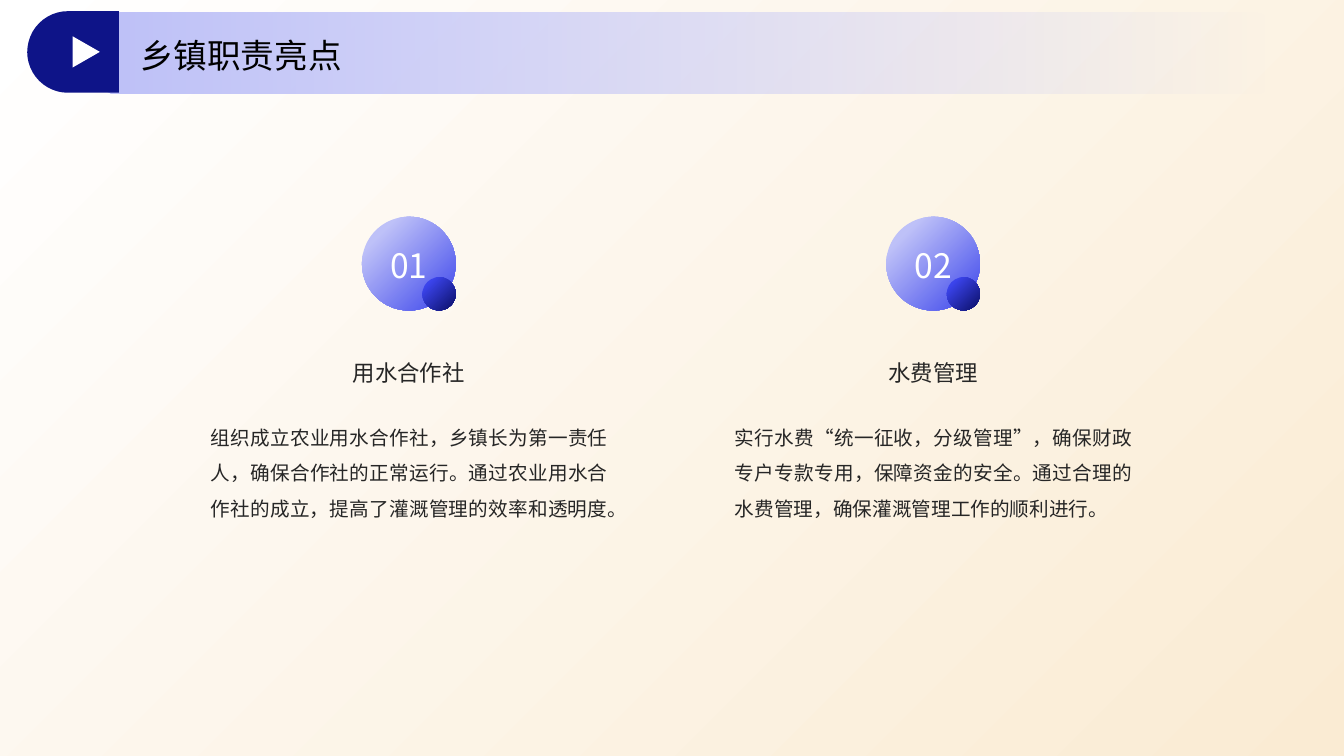
"""Build the slide on township responsibility highlights."""
from dataclasses import dataclass

import lxml.etree
import pptx
import pptx.dml.color
import pptx.enum.shapes
import pptx.enum.text
import pptx.oxml
import pptx.oxml.ns
import pptx.shapes.autoshape
import pptx.slide
import pptx.util

Inches = pptx.util.Inches
Preset = pptx.enum.shapes.MSO_SHAPE
Align = pptx.enum.text.PP_ALIGN
Anchor = pptx.enum.text.MSO_ANCHOR
Shape = pptx.shapes.autoshape.Shape
Slide = pptx.slide.Slide

FONT = "Noto Sans CJK SC"
COLORS = {
    "white": "FFFFFF",
    "cream": "FAEBD3",
    "text": "262626",
    "black": "000000",
    "lavender": "BEC1F8",
    "blue": "3B44EB",
    "navy": "0E1488",
    "midnight": "0B0F66",
}
LINEAR = '<a:lin ang="{}" scaled="0"/>'
RADIAL = '<a:path path="circle"><a:fillToRect l="100000" t="100000"/></a:path>'


@dataclass(frozen=True)
class Frame:
    left: float
    top: float
    width: float
    height: float

    def lengths(self) -> list[int]:
        return [Inches(value) for value in (self.left, self.top, self.width, self.height)]


@dataclass(frozen=True)
class Stop:
    position: int
    color: str
    opacity: int = 100


@dataclass(frozen=True)
class TextStyle:
    size: int
    color: str
    align: Align
    spacing: float = 1.0


@dataclass(frozen=True)
class Topic:
    number: str
    heading: str
    body: str


HEADING = TextStyle(16, "text", Align.CENTER)
BODY = TextStyle(14, "text", Align.JUSTIFY, 1.5)
NUMBER = TextStyle(24, "white", Align.CENTER, 1.1)
TITLE = TextStyle(24, "black", Align.LEFT, 1.1)

TOPICS = [
    Topic("01", "用水合作社",
          "组织成立农业用水合作社，乡镇长为第一责任人，确保合作社的正常运行。"
          "通过农业用水合作社的成立，提高了灌溉管理的效率和透明度。"),
    Topic("02", "水费管理",
          "实行水费“统一征收，分级管理”，确保财政专户专款专用，保障资金的安全。"
          "通过合理的水费管理，确保灌溉管理工作的顺利进行。"),
]


def rgb(name: str) -> pptx.dml.color.RGBColor:
    return pptx.dml.color.RGBColor.from_string(COLORS[name])


def add_shape(slide: Slide, preset: Preset, frame: Frame, rotation: int = 0) -> Shape:
    shape = slide.shapes.add_shape(preset, *frame.lengths())
    shape.rotation = rotation
    shape.shadow.inherit = False
    shape.line.fill.background()
    return shape


def fill_solid(shape: Shape, color: str) -> None:
    shape.fill.solid()
    shape.fill.fore_color.rgb = rgb(color)


def fill_gradient(shape: Shape, direction: str, stops: list[Stop]) -> None:
    stop_xml = "".join(
        f'<a:gs pos="{stop.position * 1000}"><a:srgbClr val="{COLORS[stop.color]}">'
        f'<a:alpha val="{stop.opacity * 1000}"/></a:srgbClr></a:gs>'
        for stop in stops
    )
    gradient = pptx.oxml.parse_xml(
        f'<a:gradFill {pptx.oxml.ns.nsdecls("a")} rotWithShape="1">'
        f"<a:gsLst>{stop_xml}</a:gsLst>{direction}</a:gradFill>"
    )
    shape.fill.background()
    properties = shape._element.spPr
    properties.replace(properties.find(pptx.oxml.ns.qn("a:noFill")), gradient)


def set_text(shape: Shape, text: str, style: TextStyle) -> None:
    shape.text_frame.text = text
    para = shape.text_frame.paragraphs[0]
    para.alignment = style.align
    para.line_spacing = style.spacing
    span = para.runs[0]
    span.font.size = pptx.util.Pt(style.size)
    span.font.color.rgb = rgb(style.color)
    span.font.name = FONT
    east_asian = lxml.etree.SubElement(span.font._element, pptx.oxml.ns.qn("a:ea"))
    east_asian.set("typeface", FONT)


def add_text(slide: Slide, frame: Frame, text: str, style: TextStyle,
             anchor: Anchor = Anchor.TOP) -> Shape:
    box = slide.shapes.add_textbox(*frame.lengths())
    text_frame = box.text_frame
    text_frame.word_wrap = True
    text_frame.vertical_anchor = anchor
    text_frame.margin_left = text_frame.margin_right = 0
    text_frame.margin_top = text_frame.margin_bottom = 0
    set_text(box, text, style)
    return box


def add_topic(slide: Slide, topic: Topic, left: float) -> None:
    heading = add_text(slide, Frame(left, 3.56, 3.93, 0.22), topic.heading, HEADING)
    heading.text_frame.auto_size = pptx.enum.text.MSO_AUTO_SIZE.SHAPE_TO_FIT_TEXT
    add_text(slide, Frame(left, 4.11, 3.94, 1.27), topic.body, BODY)

    badge = add_shape(slide, Preset.OVAL, Frame(left + 1.5, 2.15, 0.93, 0.93))
    fill_gradient(badge, RADIAL, [Stop(0, "blue"), Stop(81, "lavender")])
    badge.text_frame.vertical_anchor = Anchor.MIDDLE
    set_text(badge, topic.number, NUMBER)

    dot = add_shape(slide, Preset.OVAL, Frame(left + 2.1, 2.75, 0.33, 0.33))
    fill_gradient(dot, RADIAL, [Stop(0, "midnight"), Stop(81, "blue")])


def add_header(slide: Slide, title: str) -> None:
    band = add_shape(slide, Preset.ROUNDED_RECTANGLE, Frame(1, 0.12, 11.6, 0.81))
    fill_gradient(band, LINEAR.format(0), [Stop(0, "lavender"), Stop(100, "lavender", 0)])
    add_text(slide, Frame(1.39, 0.26, 8.51, 0.54), title, TITLE, Anchor.MIDDLE)

    tab = add_shape(slide, Preset.ROUND_2_SAME_RECTANGLE, Frame(0.32, 0.06, 0.81, 0.91), 270)
    tab.adjustments[0] = 0.5
    tab.adjustments[1] = 0
    fill_solid(tab, "navy")
    arrow = add_shape(slide, Preset.ISOSCELES_TRIANGLE, Frame(0.7, 0.38, 0.31, 0.27), 90)
    fill_solid(arrow, "white")


def main() -> None:
    deck = pptx.Presentation()
    deck.slide_width = Inches(13.33)
    deck.slide_height = Inches(7.5)
    page = deck.slides.add_slide(deck.slide_layouts[6])

    backdrop = add_shape(page, Preset.RECTANGLE, Frame(0, 0, 13.33, 7.5))
    fill_gradient(backdrop, LINEAR.format(45 * 60000), [Stop(0, "white"), Stop(100, "cream")])
    for index, topic in enumerate(TOPICS):
        add_topic(page, topic, 2.09 + 5.2 * index)
    add_header(page, "乡镇职责亮点")
    deck.save("out.pptx")


if __name__ == "__main__":
    main()
